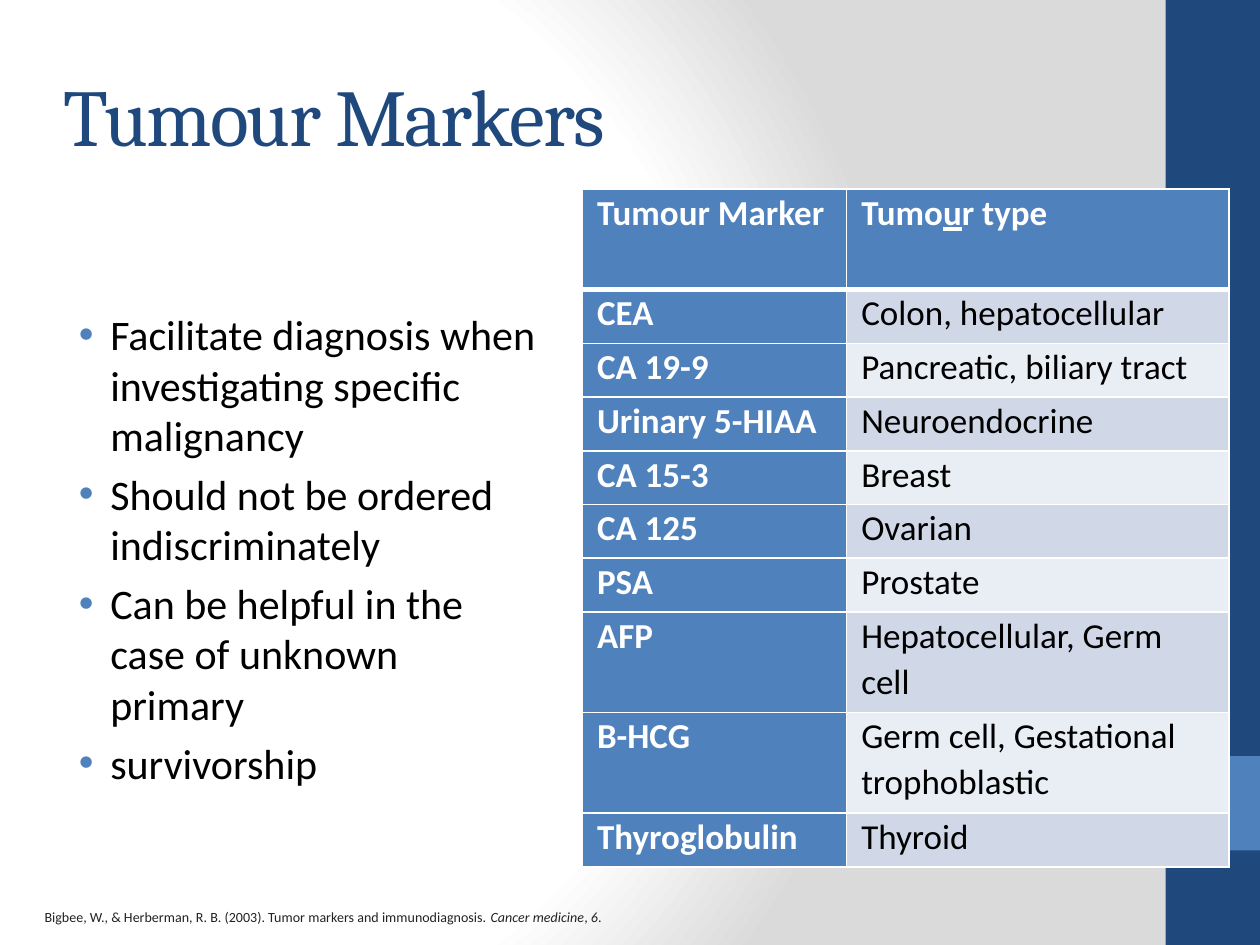
from dataclasses import dataclass

from lxml import etree
from pptx import Presentation
from pptx import util as u
from pptx.dml.color import RGBColor
from pptx.enum import shapes, text
from pptx.oxml import ns


@dataclass(frozen=True)
class Theme:
    navy: str = "1F497D"
    blue: str = "4F81BD"
    white: str = "FFFFFF"
    black: str = "000000"
    ink: str = "222222"
    grey: str = "DADADA"
    bands: tuple = ("D0D8E8", "E9EDF4")
    serif: str = "Cambria"
    sans: str = "Calibri"
    title: int = 46
    body: int = 24
    cell: int = 20
    cite: int = 8


def sub(node, tag, **attrs):
    """Append a drawing element to an XML node."""
    return etree.SubElement(node, ns.qn(tag), attrs)


def tint(node, hue):
    sub(node, "a:srgbClr", val=hue)


def put(item, **fmt):
    """Set attributes from a dict of format values."""
    for key, val in fmt.items():
        setattr(item, key, val)


class Deck:
    def __init__(self, theme):
        self.theme = theme
        self.prs = Presentation()
        put(self.prs, slide_width=u.Pt(720), slide_height=u.Pt(540))
        self.slide = self.prs.slides.add_slide(self.prs.slide_layouts[1])

    def place(self, item, box):
        keys = ("left", "top", "width", "height")
        put(item, **{key: u.Pt(val) for key, val in zip(keys, box)})

    def style(self, font, size, hue, face=None, **fmt):
        put(font, size=u.Pt(size), name=face or self.theme.sans, **fmt)
        font.color.rgb = RGBColor.from_string(hue)

    def back(self):
        """Radial gradient behind the slide."""
        th = self.theme
        root = self.slide.element.cSld
        bg = etree.Element(ns.qn("p:bg"))
        root.insert(0, bg)
        prop = sub(bg, "p:bgPr")
        grad = sub(prop, "a:gradFill", rotWithShape="1")
        stops = sub(grad, "a:gsLst")
        for pos, hue in ((0, th.white), (75, th.white), (100, th.grey)):
            tint(sub(stops, "a:gs", pos=str(pos * 1000)), hue)
        path = sub(grad, "a:path", path="circle")
        sub(path, "a:fillToRect", l="20000", t="50000", r="100000", b="50000")
        sub(prop, "a:effectLst")

    def block(self, box, hue):
        shape = self.slide.shapes.add_shape(
            shapes.MSO_SHAPE.RECTANGLE, *map(u.Pt, box))
        shape.shadow.inherit = False
        shape.fill.solid()
        shape.fill.fore_color.rgb = RGBColor.from_string(hue)
        shape.line.fill.background()

    def title(self, box, words):
        th = self.theme
        item = self.slide.shapes.title
        self.place(item, box)
        put(item.text_frame, auto_size=text.MSO_AUTO_SIZE.NONE,
            vertical_anchor=text.MSO_ANCHOR.MIDDLE)
        para = item.text_frame.paragraphs[0]
        para.alignment = text.PP_ALIGN.LEFT
        run = para.add_run()
        run.text = words
        self.style(run.font, th.title, th.navy, th.serif)
        run.font._element.set("spc", "-100")

    def bullets(self, box, lines):
        th = self.theme
        item = self.slide.placeholders[1]
        self.place(item, box)
        frame = item.text_frame
        frame.auto_size = text.MSO_AUTO_SIZE.NONE
        for num, line in enumerate(lines):
            para = frame.add_paragraph() if num else frame.paragraphs[0]
            para.space_before = u.Pt(0.2 * th.body if num else 0)
            prop = para._p.get_or_add_pPr()
            prop.set("marL", str(u.Pt(27)))
            prop.set("indent", str(u.Pt(-18)))
            tint(sub(prop, "a:buClr"), th.blue)
            sub(prop, "a:buFont", typeface="Arial")
            sub(prop, "a:buChar", char="•")
            run = para.add_run()
            run.text = line
            self.style(run.font, th.body, th.black)

    def edge(self, cell, **wide):
        """White cell borders; widths by side, 1 pt unless given."""
        prop = cell._tc.get_or_add_tcPr()
        for num, side in enumerate("LRTB"):
            line = etree.Element(ns.qn("a:ln" + side),
                                 w=str(u.Pt(wide.get(side, 1))))
            tint(sub(line, "a:solidFill"), self.theme.white)
            prop.insert(num, line)

    def cell(self, cell, parts, fill, hue, bold):
        put(cell, margin_left=u.Pt(8.4), margin_right=u.Pt(8.4),
            margin_top=0, margin_bottom=0)
        cell.fill.solid()
        cell.fill.fore_color.rgb = RGBColor.from_string(fill)
        para = cell.text_frame.paragraphs[0]
        para.line_spacing = 1.07
        for words, line in parts:
            run = para.add_run()
            run.text = words
            self.style(run.font, self.theme.cell, hue,
                       bold=bold, underline=line)

    def table(self, spot, wide, high, rows):
        th = self.theme
        box = (*spot, sum(wide), sum(high))
        grid = self.slide.shapes.add_table(
            len(rows), len(wide), *map(u.Pt, box)).table
        for col, val in zip(grid.columns, wide):
            col.width = u.Pt(val)
        for row, val in zip(grid.rows, high):
            row.height = u.Pt(val)
        for r, row in enumerate(rows):
            for c, parts in enumerate(row):
                if isinstance(parts, str):
                    parts = [(parts, False)]
                head = r == 0 or c == 0
                fill = th.blue if head else th.bands[(r - 1) % 2]
                hue = th.white if head else th.black
                cell = grid.cell(r, c)
                self.cell(cell, parts, fill, hue, head)
                self.edge(cell, **{0: {"B": 3}, 1: {"T": 3}}.get(r, {}))

    def cite(self, box, parts):
        item = self.slide.shapes.add_textbox(*map(u.Pt, box))
        put(item.text_frame, word_wrap=True,
            auto_size=text.MSO_AUTO_SIZE.SHAPE_TO_FIT_TEXT)
        para = item.text_frame.paragraphs[0]
        for words, slant in parts:
            run = para.add_run()
            run.text = words
            self.style(run.font, self.theme.cite, self.theme.ink, italic=slant)


def main():
    th = Theme()
    deck = Deck(th)

    # Background and side band
    deck.back()
    deck.block((666, 0, 54, 540), th.navy)
    deck.block((666, 432, 54, 54), th.blue)

    # Title and list
    deck.title((28.8, 26.6, 579, 77), "Tumour Markers")
    deck.bullets((28.8, 172.8, 285, 288.7), [
        "Facilitate diagnosis when investigating specific malignancy",
        "Should not be ordered indiscriminately",
        "Can be helpful in the case of unknown primary",
        "survivorship",
    ])

    # Marker table: the header and two long rows are tall
    rows = [
        ("Tumour Marker", [("Tumo", False), ("u", True), ("r type", False)]),
        ("CEA", "Colon, hepatocellular"),
        ("CA 19-9", "Pancreatic, biliary tract"),
        ("Urinary 5-HIAA", "Neuroendocrine"),
        ("CA 15-3", "Breast"),
        ("CA 125", "Ovarian"),
        ("PSA", "Prostate"),
        ("AFP", "Hepatocellular, Germ cell"),
        ("Β-HCG", "Germ cell, Gestational trophoblastic"),
        ("Thyroglobulin", "Thyroid"),
    ]
    high = [57.5 if r in (0, 7, 8) else 30.7 for r in range(len(rows))]
    deck.table((332.8, 108), (151, 218.6), high, rows)

    # Citation
    deck.cite((18.4, 515.5, 360, 17), [
        ("Bigbee, W., & Herberman, R. B. (2003). "
         "Tumor markers and immunodiagnosis. ", False),
        ("Cancer medicine", True), (", ", False), ("6", True), (".", False),
    ])

    deck.prs.save("out.pptx")


if __name__ == "__main__":
    main()
